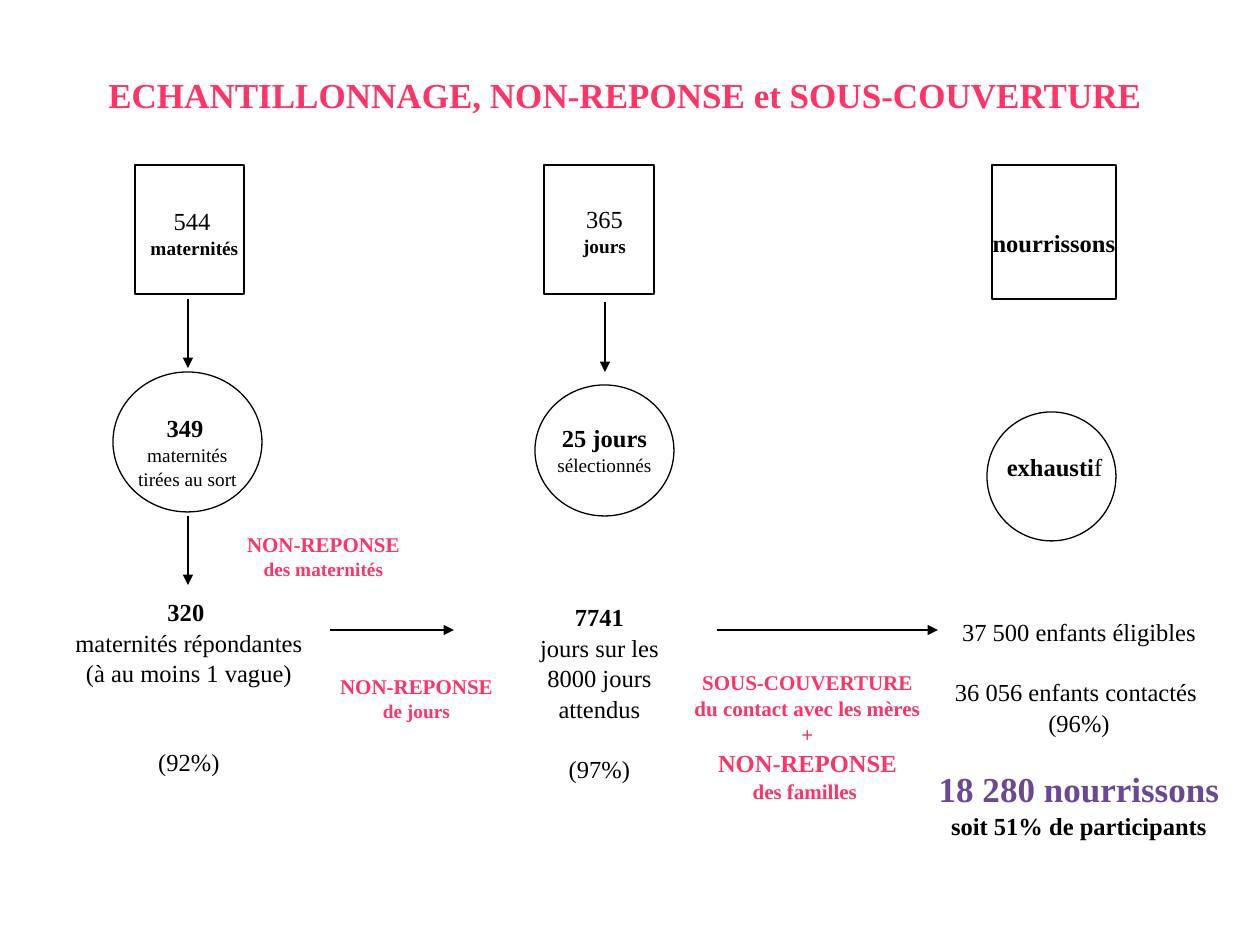
from lxml.etree import SubElement
from pptx import Presentation
from pptx.dml.color import RGBColor
from pptx.enum.shapes import MSO_CONNECTOR, MSO_SHAPE
from pptx.enum.text import PP_ALIGN
from pptx.oxml.ns import qn
from pptx.util import Inches, Pt

PX = Inches(1) / 126
BLACK = RGBColor(0x00, 0x00, 0x00)
PINK = RGBColor(0xFF, 0x33, 0x66)
PURPLE = RGBColor(0x6B, 0x47, 0x94)
FONT = "Times New Roman"
BLANK = 16.7

TITLE = "ECHANTILLONNAGE, NON-REPONSE et SOUS-COUVERTURE"

# box, color, paragraphs; a paragraph is a list of (text, size, bold) runs
# and a number between paragraphs is the space before the next one
TEXTS = [
    ((94, 66, 1062, 79), PINK, [[(TITLE, 20, True)]]),
    ((120, 199, 149, 71), BLACK, [
        [("544", 14, False), (" ", 11, False)],
        [("maternités", 11, True)]]),
    ((530, 197, 149, 71), BLACK, [
        [("365", 14, False)],
        [("jours", 11, True)]]),
    ((979, 221, 150, 48), BLACK, [[("nourrissons", 14, True)]]),
    ((113, 406, 149, 71), BLACK, [
        [("349", 14, True), (" ", 11, True)],
        [("maternités tirées au sort", 11, False)]]),
    ((525, 416, 159, 71), BLACK, [
        [("25 jours ", 14, True), ("sélectionnés", 11, False)]]),
    ((975, 445, 159, 71), BLACK, [
        [("exhausti", 14, True), ("f", 14, False)]]),
    ((62, 590, 254, 182), BLACK, [
        [("320 ", 14, True)],
        [("maternités répondantes", 14, False)],
        [("(à au moins 1 vague)", 14, False)],
        2 * BLANK,
        [("(92%)", 14, False)]]),
    ((525, 595, 149, 190), BLACK, [
        [("7741", 14, True)],
        [("jours sur les 8000 jours attendus", 14, False)],
        BLANK,
        [("(97%)", 14, False)]]),
    ((898, 610, 362, 240), BLACK, [
        [("37 500 enfants éligibles", 14, False)],
        BLANK,
        [("36 056 enfants contactés ", 14, False)],
        [("(96%)", 14, False)],
        BLANK,
        [("18 280 nourrissons", 20, True, PURPLE)],
        [("soit 51% de participants", 14, True)]]),
    ((135, 524, 377, 91), PINK, [
        [("NON-REPONSE", 12, True)],
        [("des maternités", 11, True)]]),
    ((228, 666, 377, 91), PINK, [
        [("NON-REPONSE", 12, True)],
        [("de jours", 11, True)]]),
    ((619, 662, 377, 150), PINK, [
        [("SOUS-COUVERTURE", 12, True)],
        [("du contact avec les mères", 12, True)],
        [("+", 12, True)],
        [("NON-REPONSE", 14, True)],
        [("des familles ", 12, True)]]),
]
SQUARES = [(135, 165, 109, 129), (544, 165, 110, 129), (992, 165, 124, 134)]
CIRCLES = [(113, 372, 149, 140), (535, 385, 139, 131), (987, 412, 129, 129)]
ARROWS = [(188, 299, 188, 368), (605, 302, 605, 372), (188, 516, 188, 585),
          (330, 630, 454, 630), (717, 630, 938, 630)]


def px(lengths):
    return [round(n * PX) for n in lengths]


def add_text(s, paragraphs, *, box, color):
    tf = s.shapes.add_textbox(*px(box)).text_frame
    tf.word_wrap = True
    p, gap = None, 0
    for item in paragraphs:
        if not isinstance(item, list):
            gap = item
            continue
        p = tf.add_paragraph() if p else tf.paragraphs[0]
        p.alignment = PP_ALIGN.CENTER
        p.line_spacing = 1.04
        p.space_before, gap = Pt(gap), 0
        for text, size, bold, *own in item:
            r = p.add_run()
            r.text = text
            r.font.name = FONT
            r.font.size = Pt(size)
            r.font.bold = bold
            r.font.color.rgb = own[0] if own else color


def add_outline(s, kind, box):
    sp = s.shapes.add_shape(kind, *px(box))
    sp.shadow.inherit = False
    sp.fill.background()
    sp.line.color.rgb = BLACK
    sp.line.width = Pt(0.75)
    return sp


def add_arrow(s, ends):
    c = s.shapes.add_connector(MSO_CONNECTOR.STRAIGHT, *px(ends))
    c.line.color.rgb = BLACK
    c.line.width = Pt(0.75)
    SubElement(c.line._get_or_add_ln(), qn("a:tailEnd"), type="triangle")
    SubElement(c._element.spPr, qn("a:effectLst"))


def main():
    prs = Presentation()
    prs.slide_width, prs.slide_height = Inches(10), Inches(7.5)
    s = prs.slides.add_slide(prs.slide_layouts[6])
    for box in SQUARES:
        add_outline(s, MSO_SHAPE.ROUNDED_RECTANGLE, box).adjustments[0] = 0
    for box in CIRCLES:
        add_outline(s, MSO_SHAPE.OVAL, box)
    for ends in ARROWS:
        add_arrow(s, ends)
    for box, color, paragraphs in TEXTS:
        add_text(s, paragraphs, box=box, color=color)
    prs.save("out.pptx")


if __name__ == "__main__":
    main()
